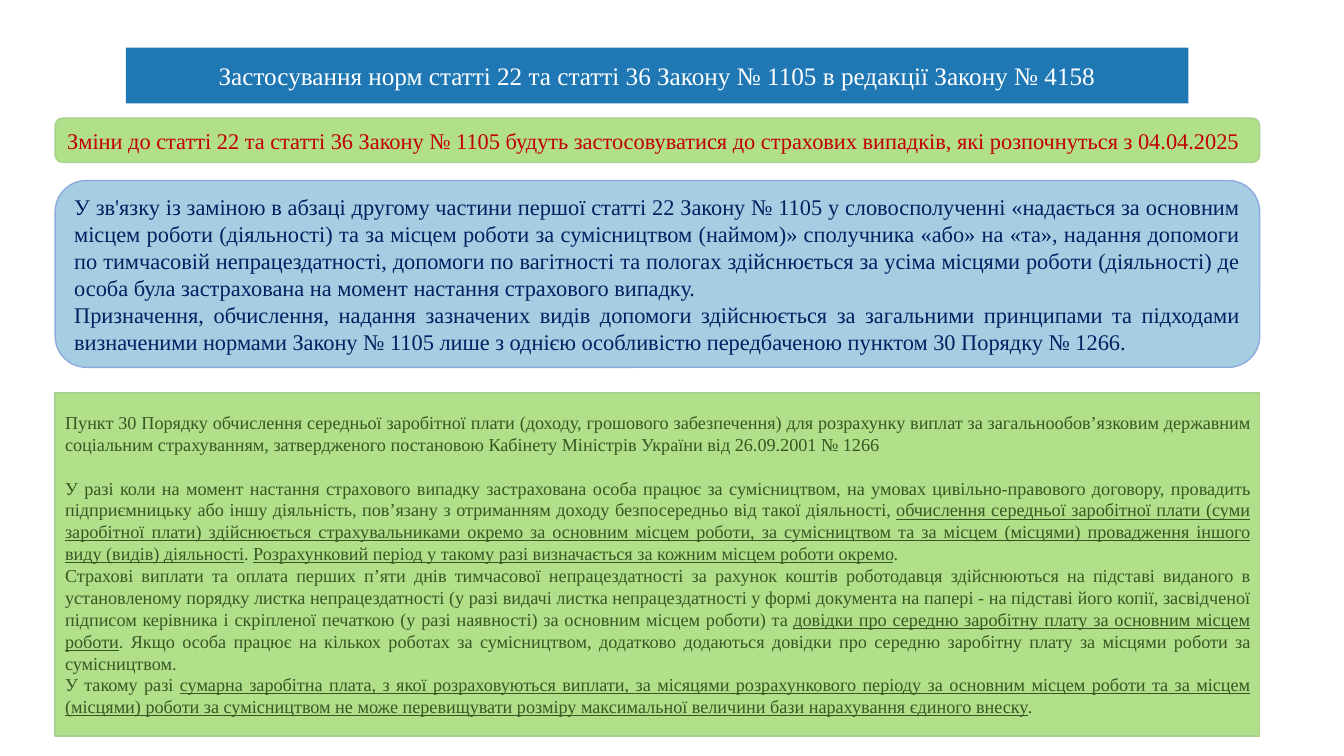
"""Build a slide on how articles 22 and 36 of Law 1105 are applied."""
import pptx
import pptx.dml.color
import pptx.enum.shapes
import pptx.enum.text
import pptx.util

Pt = pptx.util.Pt
RGB = pptx.dml.color.RGBColor
ALIGN = pptx.enum.text.PP_ALIGN
KIND = pptx.enum.shapes.MSO_SHAPE

FONT = "Times New Roman"
WHITE = RGB(0xFF, 0xFF, 0xFF)
BLUE = RGB(0x1F, 0x78, 0xB4)
SKY = RGB(0xA6, 0xCE, 0xE3)
SKY_EDGE = RGB(0x8F, 0xAA, 0xDC)
LIME = RGB(0xB2, 0xDF, 0x8A)
LIME_EDGE = RGB(0xA9, 0xD1, 0x8E)
RED = RGB(0xC0, 0x00, 0x00)
NAVY = RGB(0x00, 0x20, 0x60)
GREEN = RGB(0x38, 0x57, 0x23)

LEFT, WIDTH = 39.4, 860.4
MARK = "_"

TITLE = "Застосування норм статті 22 та статті 36 Закону № 1105 в редакції Закону № 4158"
DATE = ("Зміни до статті 22 та статті 36 Закону № 1105 будуть застосовуватися "
        "до страхових випадків, які розпочнуться з 04.04.2025")
REASON = [
    "У зв'язку із заміною в абзаці другому частини першої статті 22 Закону № 1105 "
    "у словосполученні «надається за основним місцем роботи (діяльності) та за місцем "
    "роботи за сумісництвом (наймом)» сполучника «або» на «та», надання допомоги по "
    "тимчасовій непрацездатності, допомоги по вагітності та пологах здійснюється за "
    "усіма місцями роботи (діяльності) де особа була застрахована на момент настання "
    "страхового випадку.",
    "Призначення, обчислення, надання зазначених видів допомоги здійснюється за "
    "загальними принципами та підходами визначеними нормами Закону № 1105 лише з однією "
    "особливістю передбаченою пунктом 30 Порядку № 1266.",
]
SOURCE = (
    "Пункт 30 Порядку обчислення середньої заробітної плати (доходу, грошового "
    "забезпечення) для розрахунку виплат за загальнообов’язковим державним соціальним "
    "страхуванням, затвердженого постановою Кабінету Міністрів України від 26.09.2001 "
    "№ 1266")
RULES = [
    "У разі коли на момент настання страхового випадку застрахована особа працює за "
    "сумісництвом, на умовах цивільно-правового договору, провадить підприємницьку або "
    "іншу діяльність, пов’язану з отриманням доходу безпосередньо від такої діяльності, "
    "_обчислення середньої заробітної плати (суми заробітної плати) здійснюється "
    "страхувальниками окремо за основним місцем роботи, за сумісництвом та за місцем "
    "(місцями) провадження іншого виду (видів) діяльності_. _Розрахунковий період у "
    "такому разі визначається за кожним місцем роботи окремо_.",
    "Страхові виплати та оплата перших п’яти днів тимчасової непрацездатності за рахунок "
    "коштів роботодавця здійснюються на підставі виданого в установленому порядку листка "
    "непрацездатності (у разі видачі листка непрацездатності у формі документа на папері "
    "- на підставі його копії, засвідченої підписом керівника і скріпленої печаткою (у "
    "разі наявності) за основним місцем роботи) та _довідки про середню заробітну плату "
    "за основним місцем роботи_. Якщо особа працює на кількох роботах за сумісництвом, "
    "додатково додаються довідки про середню заробітну плату за місцями роботи за "
    "сумісництвом.",
    "У такому разі _сумарна заробітна плата, з якої розраховуються виплати, за місяцями "
    "розрахункового періоду за основним місцем роботи та за місцем (місцями) роботи за "
    "сумісництвом не може перевищувати розміру максимальної величини бази нарахування "
    "єдиного внеску_.",
]


def write(para, text, size=16, color=NAVY, align=ALIGN.JUSTIFY, before=0):
    """Write text into a paragraph, underlining the parts between marks."""
    para.alignment = align
    para.space_before = Pt(before)
    for i, part in enumerate(text.split(MARK)):
        run = para.add_run()
        run.text = part
        run.font.name = FONT
        run.font.size = Pt(size)
        run.font.color.rgb = color
        if i % 2:
            run.font.underline = True


def setup(frame):
    """Wrap a text frame, centre it vertically and return its first paragraph."""
    frame.word_wrap = True
    frame.auto_size = pptx.enum.text.MSO_AUTO_SIZE.NONE
    frame.vertical_anchor = pptx.enum.text.MSO_ANCHOR.MIDDLE
    return frame.paragraphs[0]


def head(slide, text):
    """Place and fill the title banner."""
    title = slide.shapes.title
    title.left, title.top = Pt(90), Pt(34)
    title.width, title.height = Pt(758.8), Pt(39.8)
    title.fill.solid()
    title.fill.fore_color.rgb = BLUE
    write(setup(title.text_frame), text, size=18, color=WHITE, align=ALIGN.CENTER)


def panel(slide, kind, top, height, fill, edge):
    """Add a full-width panel and return its text frame."""
    shape = slide.shapes.add_shape(kind, Pt(LEFT), Pt(top), Pt(WIDTH), Pt(height))
    shape.shadow.inherit = False
    shape.fill.solid()
    shape.fill.fore_color.rgb = fill
    shape.line.color.rgb = edge
    shape.line.width = Pt(1)
    return shape.text_frame


def main():
    """Build and save the slide."""
    deck = pptx.Presentation()
    deck.slide_width, deck.slide_height = Pt(960), Pt(540)
    slide = deck.slides.add_slide(deck.slide_layouts[5])
    head(slide, TITLE)

    soft = KIND.FLOWCHART_ALTERNATE_PROCESS
    frame = panel(slide, soft, 84.4, 31.6, LIME, LIME_EDGE)
    write(setup(frame), DATE, color=RED, align=ALIGN.LEFT)

    frame = panel(slide, soft, 129, 133.4, SKY, SKY_EDGE)
    write(setup(frame), REASON[0])
    write(frame.add_paragraph(), REASON[1])

    frame = panel(slide, KIND.FLOWCHART_PROCESS, 280.6, 245, LIME, LIME_EDGE)
    write(setup(frame), SOURCE, size=13, color=GREEN)
    for i, rule in enumerate(RULES):
        gap = 0 if i else 15.6
        write(frame.add_paragraph(), rule, size=13, color=GREEN, before=gap)

    deck.save("out.pptx")


if __name__ == "__main__":
    main()
